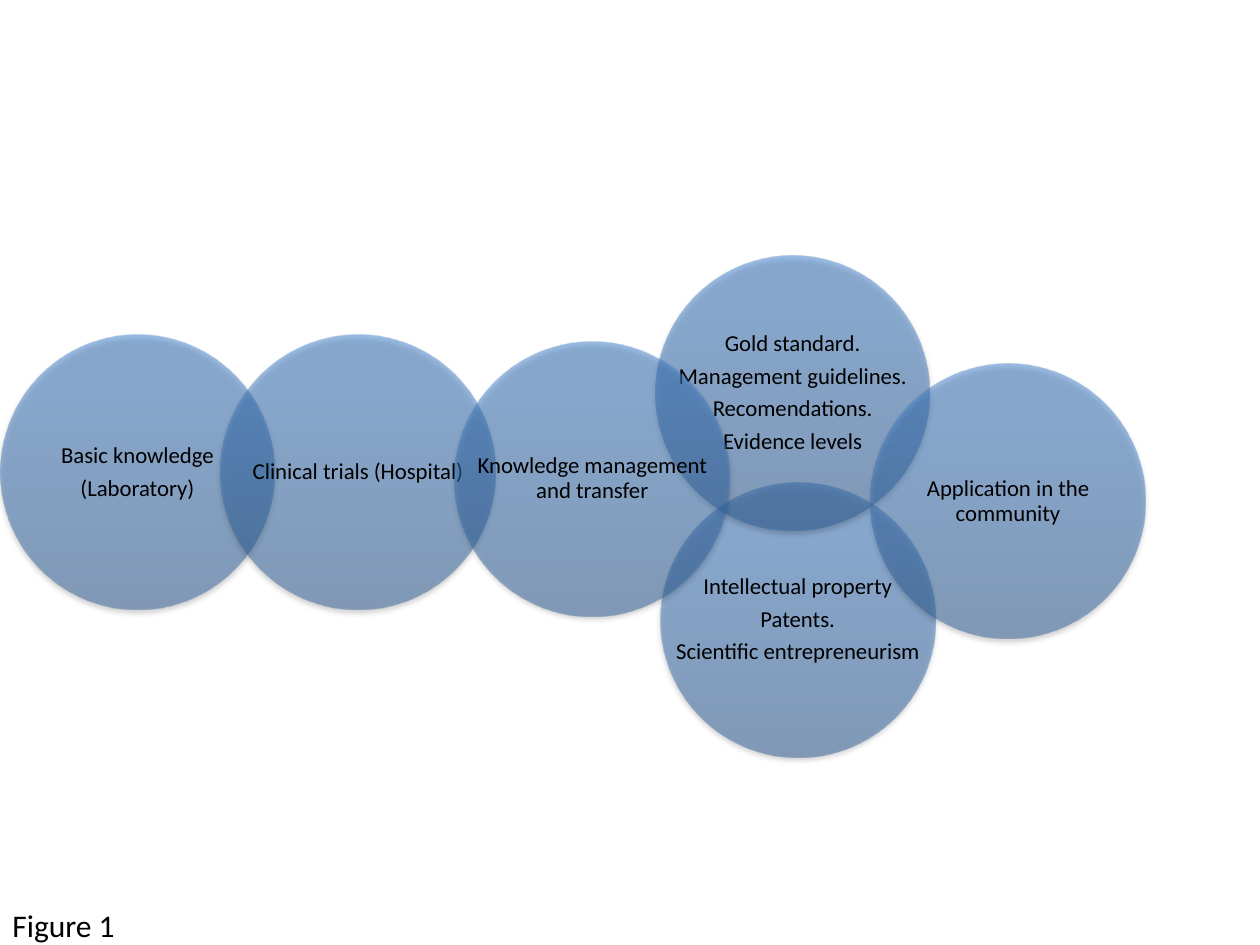
from dataclasses import dataclass

import pptx
import pptx.dml.color
import pptx.enum.shapes
import pptx.enum.text
import pptx.oxml
import pptx.oxml.ns
import pptx.util

Inches, Pt = pptx.util.Inches, pptx.util.Pt


@dataclass(frozen=True)
class Theme:
    font: str = "Calibri"
    ink: str = "000000"
    stage_size: float = 13
    caption_size: float = 18
    line_spacing: float = 0.9
    paragraph_gap: float = 4.55
    gradient: tuple = ((0, "2F5F99"), (80, "3D7CC7"), (100, "3A7CCB"))
    opacity: int = 50


THEME = Theme()
SLIDE_WIDTH, SLIDE_HEIGHT = 10, 7.5
DIAMETER = 2.18
INSETS = (0.12, 0.02)

STAGES = [
    (0, 2.66, ["Basic knowledge", "(Laboratory)"]),
    (1.75, 2.66, ["Clinical trials (Hospital)"]),
    (5.24, 3.83, ["Intellectual property", "Patents.", "Scientific entrepreneurism"]),
    (5.2, 2.03, ["Gold standard.", "Management guidelines.", "Recomendations.", "Evidence levels"]),
    (3.61, 2.71, ["Knowledge management and transfer"]),
    (6.91, 2.89, ["Application in the community"]),
]
CAPTION = "Figure 1"
CAPTION_BOX = (0, 7.14, 2.95, 0.4)


def set_font(paragraph, size):
    paragraph.font.name = THEME.font
    paragraph.font.size = Pt(size)
    paragraph.font.color.rgb = pptx.dml.color.RGBColor.from_string(THEME.ink)


def style_circle(circle):
    circle.line.fill.background()
    circle.shadow.inherit = False
    namespace = pptx.oxml.ns.nsdecls("a")
    stops = "".join(
        f'<a:gs pos="{position * 1000}"><a:srgbClr val="{color}">'
        f'<a:alpha val="{THEME.opacity * 1000}"/></a:srgbClr></a:gs>'
        for position, color in THEME.gradient
    )
    gradient = pptx.oxml.parse_xml(
        f'<a:gradFill {namespace} rotWithShape="1"><a:gsLst>{stops}</a:gsLst>'
        '<a:lin ang="16200000" scaled="0"/></a:gradFill>'
    )
    shadow = pptx.oxml.parse_xml(
        f'<a:outerShdw {namespace} blurRad="40000" dist="23000" dir="5400000" rotWithShape="0">'
        '<a:srgbClr val="000000"><a:alpha val="35000"/></a:srgbClr></a:outerShdw>'
    )
    properties = circle.element.spPr
    properties.find(pptx.oxml.ns.qn("a:prstGeom")).addnext(gradient)
    properties.find(pptx.oxml.ns.qn("a:effectLst")).append(shadow)


def add_stage(slide, left, top, lines):
    box = [Inches(value) for value in (left, top, DIAMETER, DIAMETER)]
    style_circle(slide.shapes.add_shape(pptx.enum.shapes.MSO_SHAPE.OVAL, *box))
    label = slide.shapes.add_textbox(*box).text_frame
    label.word_wrap = True
    label.vertical_anchor = pptx.enum.text.MSO_ANCHOR.MIDDLE
    label.margin_left = label.margin_right = Inches(INSETS[0])
    label.margin_top = label.margin_bottom = Inches(INSETS[1])
    label.text = "\n".join(lines)
    for paragraph in label.paragraphs:
        paragraph.alignment = pptx.enum.text.PP_ALIGN.CENTER
        paragraph.line_spacing = THEME.line_spacing
        paragraph.space_after = Pt(THEME.paragraph_gap)
        set_font(paragraph, THEME.stage_size)


def main():
    presentation = pptx.Presentation()
    presentation.slide_width = Inches(SLIDE_WIDTH)
    presentation.slide_height = Inches(SLIDE_HEIGHT)
    slide = presentation.slides.add_slide(presentation.slide_layouts[6])
    for left, top, lines in STAGES:
        add_stage(slide, left, top, lines)
    caption = slide.shapes.add_textbox(*map(Inches, CAPTION_BOX)).text_frame
    caption.word_wrap = True
    caption.auto_size = pptx.enum.text.MSO_AUTO_SIZE.SHAPE_TO_FIT_TEXT
    caption.text = CAPTION
    set_font(caption.paragraphs[0], THEME.caption_size)
    presentation.save("out.pptx")


if __name__ == "__main__":
    main()
